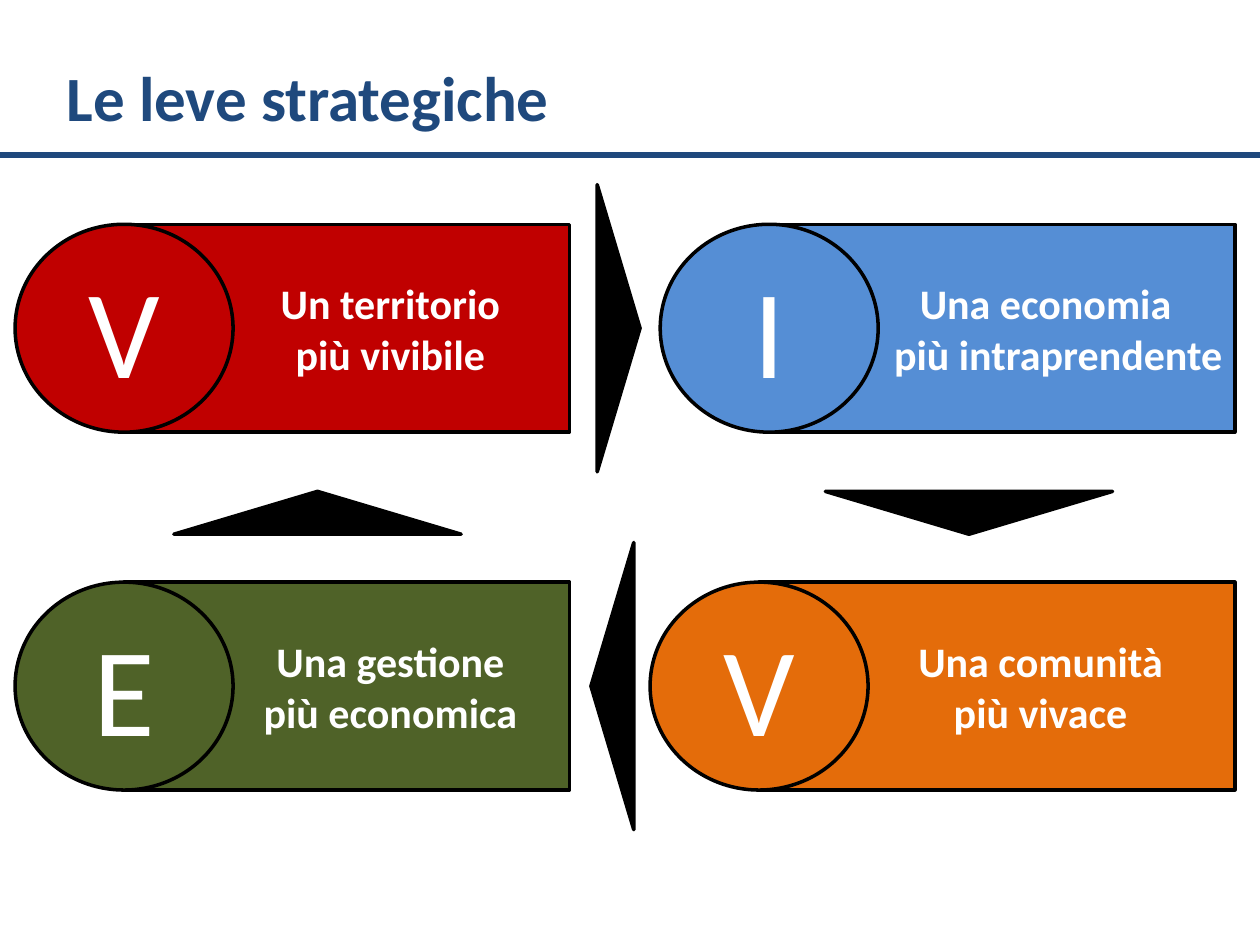
from lxml.etree import SubElement
from pptx import Presentation
from pptx.dml.color import RGBColor
from pptx.enum.shapes import MSO_CONNECTOR, MSO_SHAPE
from pptx.enum.text import MSO_ANCHOR, PP_ALIGN
from pptx.oxml.ns import qn
from pptx.util import Inches, Pt

NAVY = RGBColor(0x1F, 0x49, 0x7D)
WHITE = RGBColor(0xFF, 0xFF, 0xFF)
BLACK = RGBColor(0x00, 0x00, 0x00)
BLUE = RGBColor(0x55, 0x8E, 0xD5)
ORANGE = RGBColor(0xE4, 0x6C, 0x0A)
RED = RGBColor(0xC0, 0x00, 0x00)
GREEN = RGBColor(0x4F, 0x62, 0x28)

COLUMNS, ROWS = 100, 75
TOP_ROW, BOTTOM_ROW = 17.8, 46.2
LEVER_HEIGHT, CIRCLE_WIDTH = 16.5, 17.3
ARROW_WIDTH, ARROW_HEIGHT = 22.8, 3.4


class LeverSlide:
    """Draws the strategic levers on a 100 by 75 grid in one shared style."""

    def __init__(self, deck, font="Calibri"):
        self.font = font
        self.column = deck.slide_width / COLUMNS
        self.row = deck.slide_height / ROWS
        self.slide = deck.slides.add_slide(deck.slide_layouts[6])

    def box(self, left, top, width, height):
        return (round(left * self.column), round(top * self.row),
                round(width * self.column), round(height * self.row))

    def label(self, shape, lines, size, color, bold, aligns):
        frame = shape.text_frame
        frame.word_wrap = True
        frame.vertical_anchor = MSO_ANCHOR.MIDDLE
        for index, (line, align) in enumerate(zip(lines, aligns)):
            paragraph = frame.add_paragraph() if index else frame.paragraphs[0]
            paragraph.alignment = align
            run = paragraph.add_run()
            run.text = line
            run.font.name = self.font
            run.font.size = Pt(size)
            run.font.bold = bold
            run.font.color.rgb = color

    def figure(self, parent, kind, place, color):
        shape = parent.shapes.add_shape(kind, *self.box(*place))
        shape.shadow.inherit = False
        shape.fill.solid()
        shape.fill.fore_color.rgb = color
        shape.line.color.rgb = BLACK
        shape.line.width = Pt(2)
        return shape

    def rule(self, row):
        left, top, width, _ = self.box(0, row, COLUMNS, 0)
        line = self.slide.shapes.add_connector(
            MSO_CONNECTOR.STRAIGHT, left, top, left + width, top)
        line.line.color.rgb = NAVY
        line.line.width = Pt(3)
        SubElement(line._element.spPr, qn("a:effectLst"))

    def title(self, text, place):
        heading = self.slide.shapes.add_textbox(*self.box(*place))
        heading.fill.solid()
        heading.fill.fore_color.rgb = WHITE
        self.label(heading, [text], 36, NAVY, True, [PP_ALIGN.LEFT])

    def lever(self, letter, lines, left, right, top, color, last_align=PP_ALIGN.CENTER):
        group = self.slide.shapes.add_group_shape()
        middle = left + CIRCLE_WIDTH / 2
        panel = self.figure(group, MSO_SHAPE.RECTANGLE,
                            (middle, top, right - middle, LEVER_HEIGHT), color)
        panel.text_frame.margin_left = Inches(0.79)
        self.label(panel, lines, 24, WHITE, True, [PP_ALIGN.CENTER, last_align])
        circle = self.figure(group, MSO_SHAPE.OVAL,
                             (left, top, CIRCLE_WIDTH, LEVER_HEIGHT), color)
        self.label(circle, [letter], 72, WHITE, False, [PP_ALIGN.CENTER])

    def arrow(self, center_column, center_row, rotation):
        place = (center_column - ARROW_WIDTH / 2, center_row - ARROW_HEIGHT / 2,
                 ARROW_WIDTH, ARROW_HEIGHT)
        triangle = self.figure(self.slide, MSO_SHAPE.ISOSCELES_TRIANGLE, place, BLACK)
        triangle.rotation = rotation


def main():
    deck = Presentation()
    deck.slide_width, deck.slide_height = Inches(10), Inches(7.5)
    levers = LeverSlide(deck)
    levers.rule(12.3)
    levers.title("Le leve strategiche", (4.3, 4.1, 89.1, 7.1))

    levers.lever("I", ["Una economia", "più intraprendente"],
                 52.4, 98, TOP_ROW, BLUE, PP_ALIGN.RIGHT)
    levers.lever("V", ["Una comunità", "più vivace"], 51.6, 98, BOTTOM_ROW, ORANGE)
    levers.lever("V", ["Un territorio", "più vivibile"], 1.2, 45.2, TOP_ROW, RED)
    levers.lever("E", ["Una gestione", "più economica"], 1.2, 45.2, BOTTOM_ROW, GREEN)

    half_lever = LEVER_HEIGHT / 2
    between_rows = (TOP_ROW + BOTTOM_ROW + LEVER_HEIGHT) / 2 + 0.45
    levers.arrow(49.1, TOP_ROW + half_lever, 90)
    levers.arrow(76.9, between_rows, 180)
    levers.arrow(48.6, BOTTOM_ROW + half_lever, 270)
    levers.arrow(25.2, between_rows, 0)
    deck.save("out.pptx")


if __name__ == "__main__":
    main()
